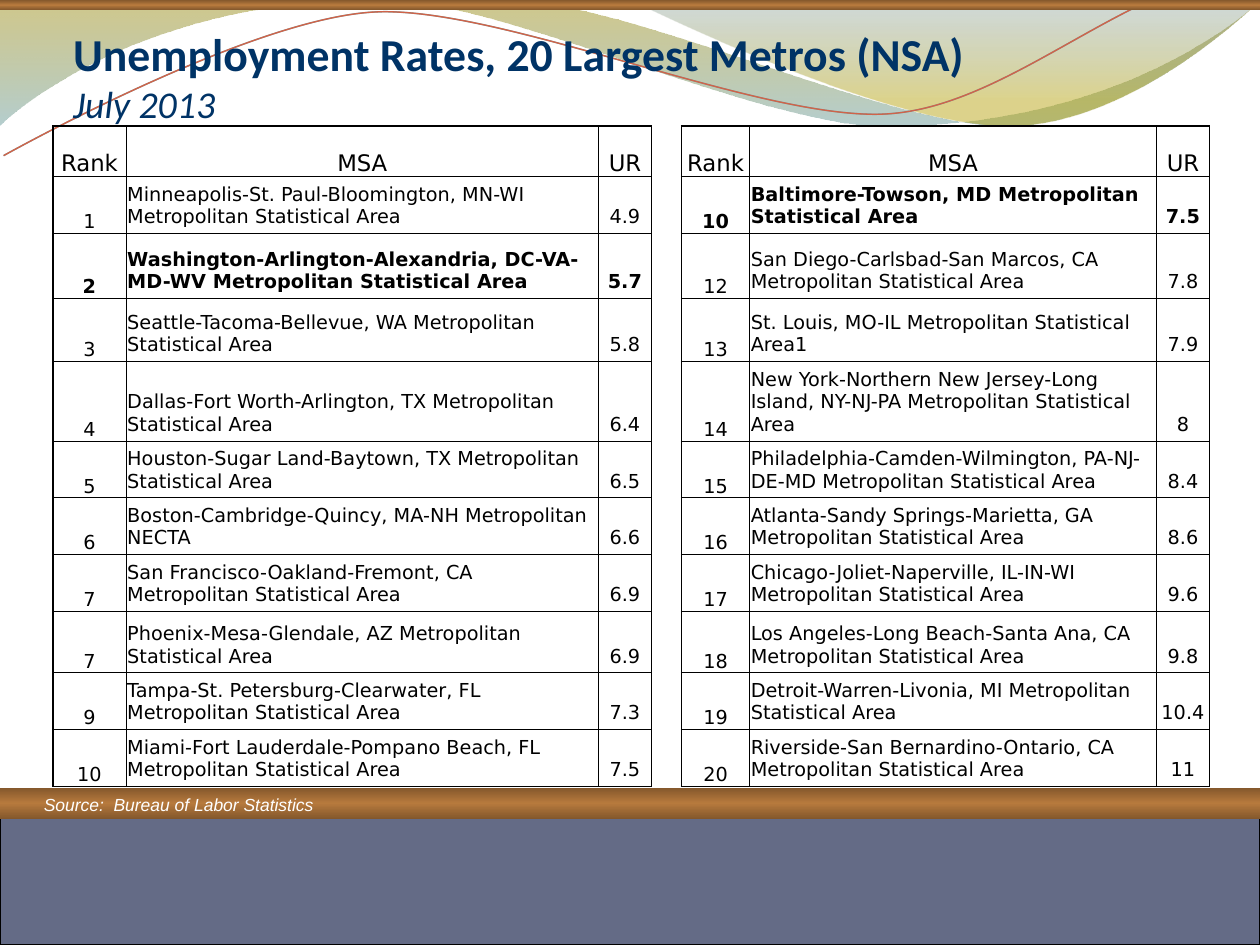
import math
from dataclasses import dataclass

from lxml import etree
from pptx import Presentation
from pptx.dml.color import RGBColor
from pptx.enum.shapes import MSO_SHAPE
from pptx.enum.text import MSO_ANCHOR, PP_ALIGN
from pptx.oxml.ns import qn
from pptx.util import Inches, Pt

RECTANGLE = MSO_SHAPE.RECTANGLE
TOP, BOTTOM = MSO_ANCHOR.TOP, MSO_ANCHOR.BOTTOM
LEFT, CENTER = PP_ALIGN.LEFT, PP_ALIGN.CENTER


@dataclass(frozen=True)
class Theme:
    black: str = "000000"
    white: str = "FFFFFF"
    navy: str = "003366"
    slate: str = "646B86"
    teal_line: str = "7C999A"
    red_line: str = "D16349"
    # Gradient stops: position %, colour, opacity %
    copper: tuple = ((0, "83572C", 100), (50, "B77A3D", 100), (100, "83572C", 100))
    olive_wave: tuple = ((0, "978500", 45), (100, "77A5A6", 55))
    gold_wave: tuple = ((0, "648484", 30), (80, "B49F00", 45))
    title_font: str = "Calibri"
    source_font: str = "Arial"
    table_font: str = "DejaVu Sans"
    title_size: float = 26.1
    subtitle_size: float = 21.6
    source_size: float = 10
    header_size: float = 13
    body_size: float = 11
    thin: float = 0.5
    thick: float = 1


# Each wave is a list of points: one point is a line, three are a Bezier curve.
OLIVE_WAVE = [
    [(0, -0.01)], [(4.4, -0.01)],
    [(4.76, 0.17), (6.64, 0.63), (7.58, 0.63)],
    [(8.53, 0.63), (9.58, 0.26), (10, 0.09)], [(10.01, 0.36)],
    [(9.83, 0.44), (8.7, 0.76), (7.46, 0.75)],
    [(6.22, 0.75), (3.82, 0.28), (2.57, 0.34)],
    [(1.29, 0.35), (0.46, 0.83), (-0.01, 1.13)], [(0, -0.01)],
]
GOLD_WAVE = [
    [(4.79, -0.01)],
    [(5.09, 0.11), (6.82, 0.62), (7.69, 0.65)],
    [(8.56, 0.69), (9.61, 0.32), (10, 0.21)], [(10, 0)], [(4.79, -0.01)],
]
TEAL_CURVE = [
    [(0, 1.11)],
    [(0.48, 0.93), (1.58, 0.57), (2.77, 0.52)],
    [(3.95, 0.47), (5.93, 0.89), (7.13, 0.8)],
    [(8.33, 0.71), (9.38, 0.15), (9.98, -0.02)],
]
RED_CURVE = [
    [(0, 1.04)],
    [(0.47, 0.96), (1.64, 0.61), (2.83, 0.56)],
    [(4.03, 0.51), (5.97, 0.83), (7.17, 0.75)],
    [(8.36, 0.67), (9.41, 0.21), (10, 0.06)],
]
CURVE_TILT = -2.7

COLUMN_WIDTHS = [0.58, 3.75, 0.42, 0.22, 0.54, 3.23, 0.42]
ROW_HEIGHTS = [0.4, 0.45, 0.52, 0.5, 0.63, 0.45, 0.45, 0.45, 0.49, 0.45, 0.45]
HEADER = ("Rank", "MSA", "UR")
LOWEST_RATES = [
    ("1", "Minneapolis-St. Paul-Bloomington, MN-WI Metropolitan Statistical Area", "4.9"),
    ("2", "Washington-Arlington-Alexandria, DC-VA-MD-WV Metropolitan Statistical Area", "5.7"),
    ("3", "Seattle-Tacoma-Bellevue, WA Metropolitan Statistical Area", "5.8"),
    ("4", "Dallas-Fort Worth-Arlington, TX Metropolitan Statistical Area", "6.4"),
    ("5", "Houston-Sugar Land-Baytown, TX Metropolitan Statistical Area", "6.5"),
    ("6", "Boston-Cambridge-Quincy, MA-NH Metropolitan NECTA", "6.6"),
    ("7", "San Francisco-Oakland-Fremont, CA Metropolitan Statistical Area", "6.9"),
    ("7", "Phoenix-Mesa-Glendale, AZ Metropolitan Statistical Area", "6.9"),
    ("9", "Tampa-St. Petersburg-Clearwater, FL Metropolitan Statistical Area", "7.3"),
    ("10", "Miami-Fort Lauderdale-Pompano Beach, FL Metropolitan Statistical Area", "7.5"),
]
HIGHEST_RATES = [
    ("10", "Baltimore-Towson, MD Metropolitan Statistical Area", "7.5"),
    ("12", "San Diego-Carlsbad-San Marcos, CA Metropolitan Statistical Area", "7.8"),
    ("13", "St. Louis, MO-IL Metropolitan Statistical Area1", "7.9"),
    ("14", "New York-Northern New Jersey-Long Island, NY-NJ-PA Metropolitan Statistical Area", "8"),
    ("15", "Philadelphia-Camden-Wilmington, PA-NJ-DE-MD Metropolitan Statistical Area", "8.4"),
    ("16", "Atlanta-Sandy Springs-Marietta, GA Metropolitan Statistical Area", "8.6"),
    ("17", "Chicago-Joliet-Naperville, IL-IN-WI Metropolitan Statistical Area", "9.6"),
    ("18", "Los Angeles-Long Beach-Santa Ana, CA Metropolitan Statistical Area", "9.8"),
    ("19", "Detroit-Warren-Livonia, MI Metropolitan Statistical Area", "10.4"),
    ("20", "Riverside-San Bernardino-Ontario, CA Metropolitan Statistical Area", "11"),
]
HIGHLIGHTED = ("Washington", "Baltimore")


def add_span(para, text, font, size, color, bold=False, italic=False):
    span = para.add_run()
    span.text = text
    span.font.name, span.font.size = font, Pt(size)
    span.font.bold, span.font.italic = bold, italic
    span.font.color.rgb = RGBColor.from_string(color)


def fill_gradient(shape, stops):
    """Fill from top to bottom with stops that may be transparent."""
    shape.fill.gradient()
    gradient = shape.fill._xPr.find(qn("a:gradFill"))
    for child in list(gradient):
        gradient.remove(child)
    stop_list = etree.SubElement(gradient, qn("a:gsLst"))
    for position, color, opacity in stops:
        stop = etree.SubElement(stop_list, qn("a:gs"), pos=str(position * 1000))
        tint = etree.SubElement(stop, qn("a:srgbClr"), val=color)
        if opacity < 100:
            etree.SubElement(tint, qn("a:alpha"), val=str(opacity * 1000))
    etree.SubElement(gradient, qn("a:lin"), ang="5400000", scaled="0")


def turn(point, center, degrees):
    angle = math.radians(degrees)
    x, y = point[0] - center[0], point[1] - center[1]
    return (center[0] + x * math.cos(angle) - y * math.sin(angle),
            center[1] + x * math.sin(angle) + y * math.cos(angle))


def set_borders(cell, color, widths):
    """Draw the left, right, top and bottom borders; a width of 0 draws none."""
    properties = cell._tc.get_or_add_tcPr()
    for index, (side, width) in enumerate(zip("LRTB", widths)):
        border = etree.Element(qn(f"a:ln{side}"), w=str(Pt(width)))
        if width:
            solid = etree.SubElement(border, qn("a:solidFill"))
            etree.SubElement(solid, qn("a:srgbClr"), val=color)
        else:
            etree.SubElement(border, qn("a:noFill"))
        properties.insert(index, border)


class SlideBuilder:
    def __init__(self, page, theme):
        self.page, self.theme = page, theme

    def paint(self, shape, fill=None, stops=None, line=None, weight=0.75):
        shape.shadow.inherit = False
        if stops:
            fill_gradient(shape, stops)
        elif fill:
            shape.fill.solid()
            shape.fill.fore_color.rgb = RGBColor.from_string(fill)
        else:
            shape.fill.background()
        if line:
            shape.line.color.rgb = RGBColor.from_string(line)
            shape.line.width = Pt(weight)
        else:
            shape.line.fill.background()

    def band(self, top, height, **style):
        box = self.page.shapes.add_shape(
            RECTANGLE, Inches(0), Inches(top), Inches(10), Inches(height))
        self.paint(box, **style)

    def wave(self, segments, tilt=0, center=(0, 0), **style):
        level = [[turn(point, center, -tilt) for point in segment] for segment in segments]
        start, *points = [point for segment in level for point in segment]
        closed = segments[0] == segments[-1]
        builder = self.page.shapes.build_freeform(*start, scale=Inches(1))
        builder.add_line_segments(points, close=closed)
        shape = builder.convert_to_shape()
        lines = iter(list(shape._element.iter(qn("a:lnTo"))))
        for segment in segments[1:]:
            first, *others = [next(lines) for _ in segment]
            if others:
                first.tag = qn("a:cubicBezTo")
                for other in others:
                    first.append(other[0])
                    other.getparent().remove(other)
        shape.rotation = tilt
        self.paint(shape, **style)

    def text(self, left, top, width, height, spans, anchor=TOP, margins=(0.1, 0.05, 0.1, 0.05)):
        """Write one paragraph with a line break between the spans."""
        box = self.page.shapes.add_textbox(*map(Inches, (left, top, width, height)))
        frame = box.text_frame
        frame.word_wrap, frame.vertical_anchor = True, anchor
        (frame.margin_left, frame.margin_top,
         frame.margin_right, frame.margin_bottom) = map(Inches, margins)
        para = frame.paragraphs[0]
        for index, span in enumerate(spans):
            if index:
                para.add_line_break()
            add_span(para, **span)

    def cell(self, cell, text, role, is_header, bold):
        theme = self.theme
        tight = is_header or role == "Rank"
        cell.vertical_anchor = BOTTOM
        cell.margin_left = cell.margin_right = Inches(0.01)
        cell.margin_top = Inches(0.01 if tight else 0.04)
        cell.margin_bottom = Inches(0 if tight else 0.04)
        para = cell.text_frame.paragraphs[0]
        para.alignment = LEFT if role == "MSA" and not is_header else CENTER
        add_span(para, text, theme.table_font,
                 theme.header_size if is_header else theme.body_size, theme.black, bold)
        set_borders(cell, theme.black, (
            theme.thick if role == "Rank" else theme.thin,
            theme.thick if role == "UR" else theme.thin,
            theme.thick if is_header else theme.thin, theme.thin))

    def rate_table(self, left, top, halves):
        theme = self.theme
        frame = self.page.shapes.add_table(
            len(ROW_HEIGHTS), len(COLUMN_WIDTHS), Inches(left), Inches(top),
            Inches(sum(COLUMN_WIDTHS)), Inches(sum(ROW_HEIGHTS)))
        table = frame.table
        table.first_row = table.horz_banding = False
        for column, width in zip(table.columns, COLUMN_WIDTHS):
            column.width = Inches(width)
        for row, height in zip(table.rows, ROW_HEIGHTS):
            row.height = Inches(height)
        for cell in table.iter_cells():
            cell.fill.background()
        gap = len(HEADER)
        for row in range(len(ROW_HEIGHTS)):
            spacer = table.cell(row, gap)
            spacer.margin_top = spacer.margin_bottom = 0
            set_borders(spacer, theme.black, (theme.thick, theme.thick, 0, 0))
        for half, records in enumerate(halves):
            for row, record in enumerate([HEADER, *records]):
                bold = record[1].startswith(HIGHLIGHTED)
                for column, (role, text) in enumerate(zip(HEADER, record)):
                    self.cell(table.cell(row, half * (gap + 1) + column),
                              text, role, row == 0, bold)


def main():
    theme = Theme()
    deck = Presentation()
    deck.slide_width, deck.slide_height = Inches(10), Inches(7.5)
    slide = SlideBuilder(deck.slides.add_slide(deck.slide_layouts[6]), theme)

    slide.wave(OLIVE_WAVE, stops=theme.olive_wave)
    slide.wave(GOLD_WAVE, stops=theme.gold_wave)
    slide.wave(TEAL_CURVE, CURVE_TILT, (4.99, 0.58), line=theme.teal_line, weight=0.85)
    slide.wave(RED_CURVE, CURVE_TILT, (5, 0.59), line=theme.red_line)
    slide.band(0, 0.08, stops=theme.copper)
    slide.band(6.42, 1.08, fill=theme.slate, line=theme.black)
    slide.band(6.25, 0.25, stops=theme.copper)

    heading = {"font": theme.title_font, "color": theme.navy}
    slide.text(0.58, 0.25, 8.92, 0.75, [
        dict(heading, text="Unemployment Rates, 20 Largest Metros (NSA)",
             size=theme.title_size, bold=True),
        dict(heading, text="July 2013", size=theme.subtitle_size, italic=True),
    ], anchor=BOTTOM, margins=(0, 0.05, 0, 0))
    slide.text(0.25, 6.25, 6, 0.27, [
        dict(text="Source:  Bureau of Labor Statistics", font=theme.source_font,
             size=theme.source_size, color=theme.white, italic=True)])
    slide.rate_table(0.42, 1, [LOWEST_RATES, HIGHEST_RATES])
    deck.save("out.pptx")


if __name__ == "__main__":
    main()
